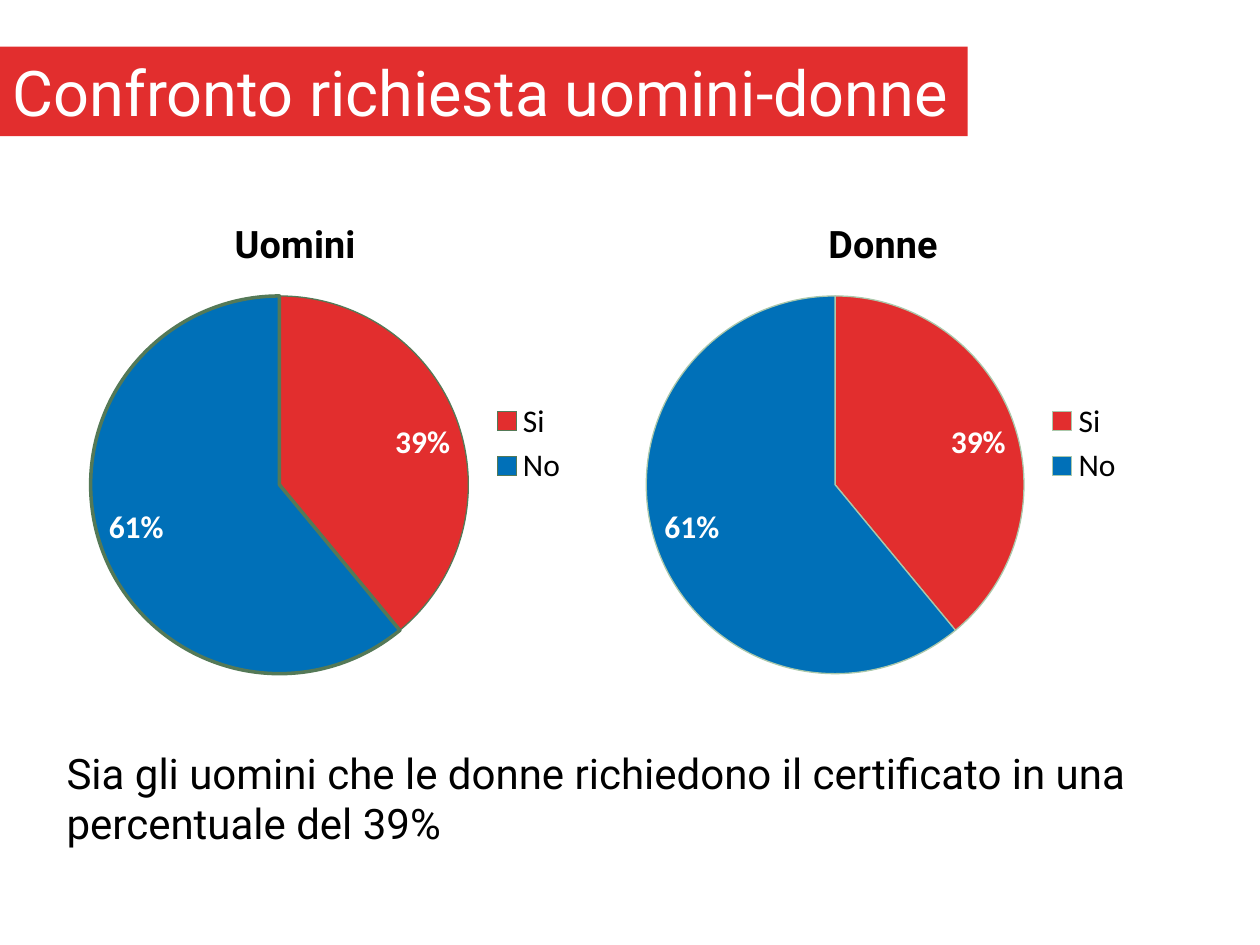
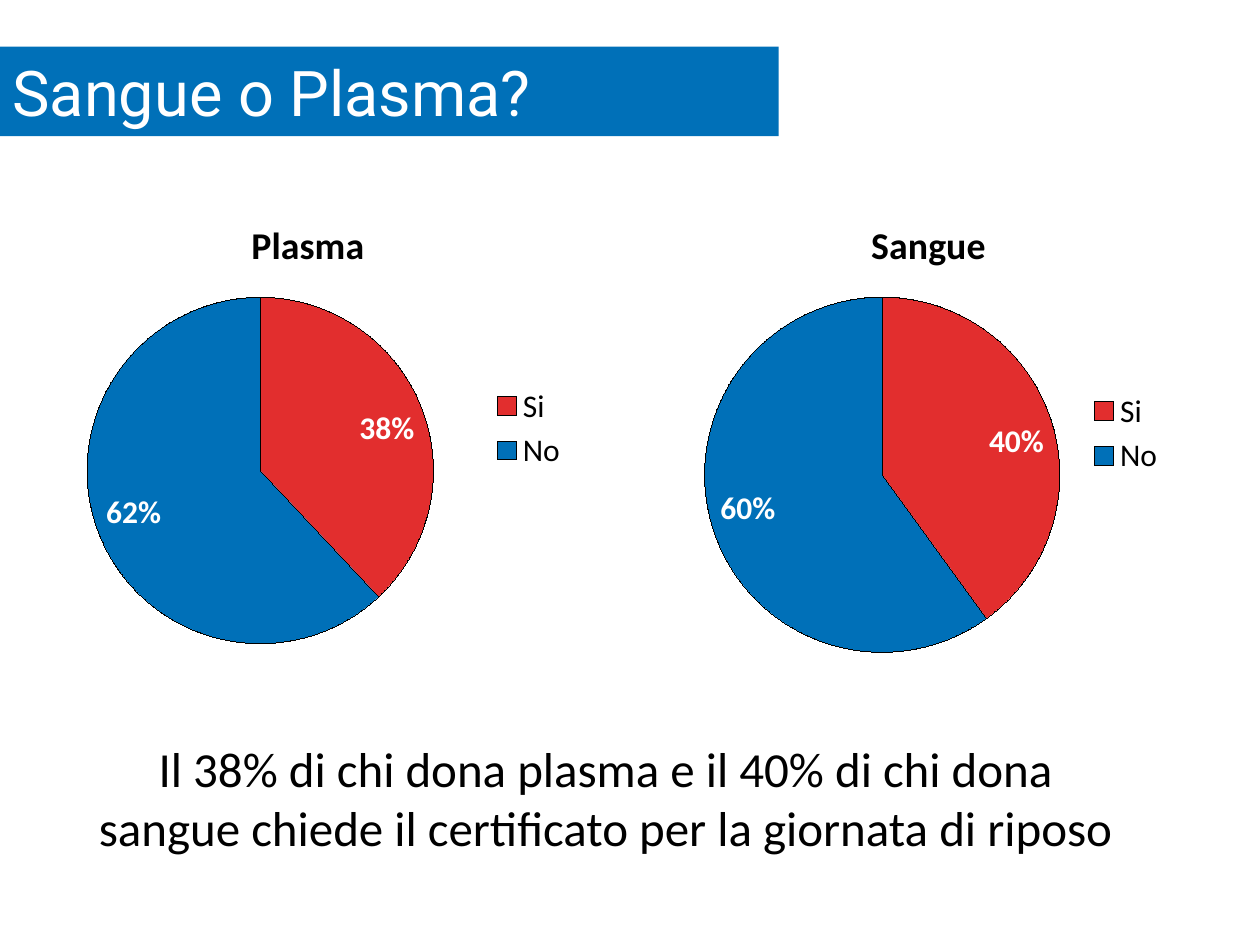
from lxml import etree
from pptx import Presentation
from pptx.chart.data import CategoryChartData
from pptx.dml.color import RGBColor
from pptx.enum.chart import XL_CHART_TYPE, XL_LABEL_POSITION, XL_LEGEND_POSITION
from pptx.enum.text import MSO_ANCHOR, MSO_AUTO_SIZE, PP_ALIGN
from pptx.oxml.ns import qn
from pptx.util import Inches, Pt

PIE = XL_CHART_TYPE.PIE
LEGEND_RIGHT = XL_LEGEND_POSITION.RIGHT
INSIDE_END = XL_LABEL_POSITION.INSIDE_END
LEFT, CENTER = PP_ALIGN.LEFT, PP_ALIGN.CENTER
MIDDLE, TOP = MSO_ANCHOR.MIDDLE, MSO_ANCHOR.TOP
NO_FIT = MSO_AUTO_SIZE.NONE

RED = RGBColor(0xE2, 0x2E, 0x2E)
BLUE = RGBColor(0x00, 0x70, 0xB8)
WHITE = RGBColor(0xFF, 0xFF, 0xFF)
BLACK = RGBColor(0x00, 0x00, 0x00)
DARK_GREEN = RGBColor(0x54, 0x79, 0x57)
PALE_GREEN = RGBColor(0xAB, 0xC8, 0xAB)

ROBOTO, CALIBRI = "Roboto", "Calibri"
ANSWERS = ("Si", "No")
ANSWER_COLOURS = (RED, BLUE)


def set_font(font, colour, **values):
    for name, value in values.items():
        setattr(font, name, value)
    font.color.rgb = colour


def fill_text(frame, wording, align, anchor, colour, **font_values):
    frame_values = {"word_wrap": True, "auto_size": NO_FIT, "vertical_anchor": anchor}
    for name, value in frame_values.items():
        setattr(frame, name, value)
    paragraph = frame.paragraphs[0]
    paragraph.alignment = align
    run = paragraph.add_run()
    run.text = wording
    set_font(run.font, colour, **font_values)


def place(part, box):
    for side, length in zip(("left", "top", "width", "height"), box):
        setattr(part, side, Inches(length))


def add_title_band(slide, wording, width, colour):
    band = slide.shapes.title
    place(band, (0, 0.37, width, 0.71))
    band.fill.solid()
    band.fill.fore_color.rgb = colour
    fill_text(band.text_frame, wording, LEFT, MIDDLE, WHITE, name=ROBOTO, size=Pt(36))


def set_layout(parent, before, **fractions):
    for old in parent.findall(qn("c:layout")):
        parent.remove(old)
    layout = etree.Element(qn("c:layout"))
    manual = etree.SubElement(layout, qn("c:manualLayout"))
    if "w" in fractions:
        etree.SubElement(manual, qn("c:layoutTarget")).set("val", "inner")
    for axis in "xy":
        etree.SubElement(manual, qn(f"c:{axis}Mode")).set("val", "edge")
    for name, value in fractions.items():
        etree.SubElement(manual, qn(f"c:{name}")).set("val", f"{value:.3f}")
    parent.find(qn(before)).addprevious(layout)


def add_pie(slide, box, heading, shares, pie, outlines, heading_font=CALIBRI, heading_at=None):
    left, top, width, height = box
    data = CategoryChartData(number_format="0%")
    data.categories = ANSWERS
    data.add_series(heading, shares)
    chart = slide.shapes.add_chart(PIE, *map(Inches, box), data).chart
    set_font(chart.font, BLACK, name=CALIBRI, size=Pt(18))

    chart.has_title = True
    title_frame = chart.chart_title.text_frame
    title_frame.text = heading
    set_font(title_frame.paragraphs[0].runs[0].font, BLACK,
             name=heading_font, size=Pt(21.6), bold=True)
    chart.chart_title.include_in_layout = False
    if heading_at:
        x, y = heading_at
        set_layout(chart.chart_title._element, "c:overlay", x=x / width, y=y / height)

    chart.has_legend = True
    chart.legend.position = LEGEND_RIGHT
    chart.legend.include_in_layout = False

    plot = chart.plots[0]
    plot.vary_by_categories = True
    plot.has_data_labels = True
    labels = plot.data_labels
    label_values = {"show_value": True, "show_percentage": False, "number_format": "0%",
                    "number_format_is_linked": False, "position": INSIDE_END}
    for name, value in label_values.items():
        setattr(labels, name, value)
    set_font(labels.font, WHITE, name=CALIBRI, size=Pt(18), bold=True)

    for index, (colour, (line_colour, line_width)) in enumerate(zip(ANSWER_COLOURS, outlines)):
        sector = plot.series[0].points[index].format
        sector.fill.solid()
        sector.fill.fore_color.rgb = colour
        sector.line.color.rgb = line_colour
        sector.line.width = Pt(line_width)

    pie_left, pie_top, diameter = pie
    set_layout(chart._chartSpace.chart.plotArea, "c:pieChart",
               x=(pie_left - left) / width, y=(pie_top - top) / height,
               w=diameter / width, h=diameter / height)


def add_comment(slide, box, wording, align, font, size):
    comment = slide.shapes.add_textbox(*map(Inches, box))
    fill_text(comment.text_frame, wording, align, TOP, BLACK, name=font, size=Pt(size))


def build_gender_slide(slide):
    add_title_band(slide, "Confronto richiesta uomini-donne", 7.68, RED)
    shares = (0.39, 0.61)
    add_pie(slide, (0.59, 1.55, 4.02, 3.94), "Uomini", shares, (0.72, 2.35, 3),
            ((DARK_GREEN, 0.75), (DARK_GREEN, 2)), ROBOTO, (1.22, 0.13))
    add_pie(slide, (5, 1.55, 4.02, 3.94), "Donne", shares, (5.13, 2.35, 3),
            ((PALE_GREEN, 0.75),) * 2, ROBOTO)
    add_comment(slide, (0.43, 5.88, 8.98, 0.91),
                "Sia gli uomini che le donne richiedono il certificato in una percentuale del 39%",
                LEFT, ROBOTO, 24)


def build_donation_slide(slide):
    add_title_band(slide, "Sangue o Plasma?", 6.18, BLUE)
    hairlines = ((BLACK, 0),) * 2
    add_pie(slide, (0.28, 1.55, 4.33, 3.7), "Plasma", (0.38, 0.62), (0.69, 2.36, 2.75), hairlines)
    add_pie(slide, (5.39, 1.55, 3.96, 3.78), "Sangue", (0.4, 0.6), (5.59, 2.36, 2.82), hairlines)
    add_comment(slide, (0.59, 5.81, 8.43, 1.04),
                "Il 38% di chi dona plasma e il 40% di chi dona sangue chiede il certificato "
                "per la giornata di riposo", CENTER, CALIBRI, 28)


def main():
    deck = Presentation()
    deck.slide_width, deck.slide_height = Inches(10), Inches(7.5)
    title_only = deck.slide_layouts[5]
    for build in (build_gender_slide, build_donation_slide):
        build(deck.slides.add_slide(title_only))
    deck.save("out.pptx")


if __name__ == "__main__":
    main()
